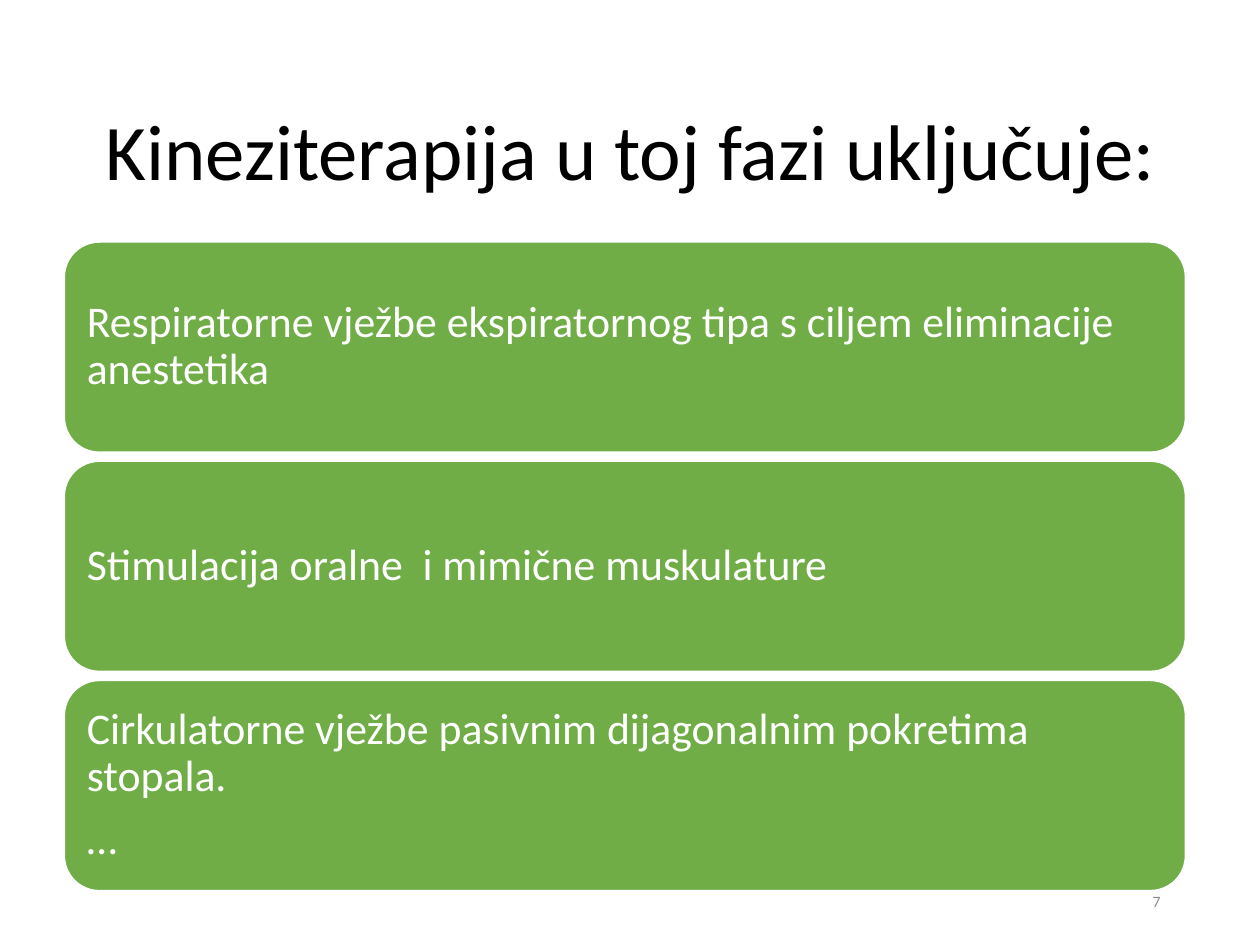
from pptx import Presentation
from pptx.dml.color import RGBColor
from pptx.enum import shapes, text
from pptx.util import Inches, Pt

# Content
TITLE = "Kineziterapija u toj fazi uključuje:"
PAGE_NUMBER = "7"
CARDS = [
    ["Respiratorne vježbe ekspiratornog tipa s ciljem eliminacije anestetika"],
    ["Stimulacija oralne  i mimične muskulature"],
    ["Cirkulatorne vježbe pasivnim dijagonalnim pokretima stopala.", "…"],
]

# Format
FONT = "Calibri"
COLORS = {"ink": "000000", "muted": "8C8C8C", "card": "70AD47", "white": "FFFFFF"}
ALIGN = text.PP_ALIGN

# Card column
CARD_LEFT, CARD_TOP = 0.51, 1.92
CARD_WIDTH, CARD_HEIGHT = 8.9, 1.67
CARD_STEP = 1.74


def color(name):
    return RGBColor.from_string(COLORS[name])


def write(shape, lines, size, ink, align=ALIGN.LEFT, line_spacing=0.9,
          space_after=0, inset_y=0.05):
    frame = shape.text_frame
    frame.word_wrap = True
    frame.vertical_anchor = text.MSO_ANCHOR.MIDDLE
    frame.margin_left = frame.margin_right = Inches(0.1)
    frame.margin_top = frame.margin_bottom = Inches(inset_y)
    for index, line in enumerate(lines):
        para = frame.add_paragraph() if index else frame.paragraphs[0]
        para.alignment = align
        para.line_spacing = line_spacing
        para.space_after = Pt(space_after)
        span = para.add_run()
        span.text = line
        span.font.name = FONT
        span.font.size = Pt(size)
        span.font.color.rgb = color(ink)


deck = Presentation()
deck.slide_width, deck.slide_height = Inches(10), Inches(7.5)
page = deck.slides.add_slide(deck.slide_layouts[6])

# Title
title = page.shapes.add_textbox(Inches(0.69), Inches(0.61), Inches(8.62), Inches(1.24))
write(title, [TITLE], 45, "ink", align=ALIGN.CENTER)

# Page number
number = page.shapes.add_textbox(Inches(7.06), Inches(6.95), Inches(2.25), Inches(0.4))
write(number, [PAGE_NUMBER], 9, "muted", align=ALIGN.RIGHT, line_spacing=1.0, space_after=6)

# Cards
for row, lines in enumerate(CARDS):
    card = page.shapes.add_shape(
        shapes.MSO_SHAPE.ROUNDED_RECTANGLE,
        Inches(CARD_LEFT), Inches(CARD_TOP + row * CARD_STEP),
        Inches(CARD_WIDTH), Inches(CARD_HEIGHT))
    card.shadow.inherit = False
    card.fill.solid()
    card.fill.fore_color.rgb = color("card")
    card.line.color.rgb = color("white")
    card.line.width = Pt(1)
    write(card, lines, 25, "white", space_after=9, inset_y=0.1)

deck.save("out.pptx")
